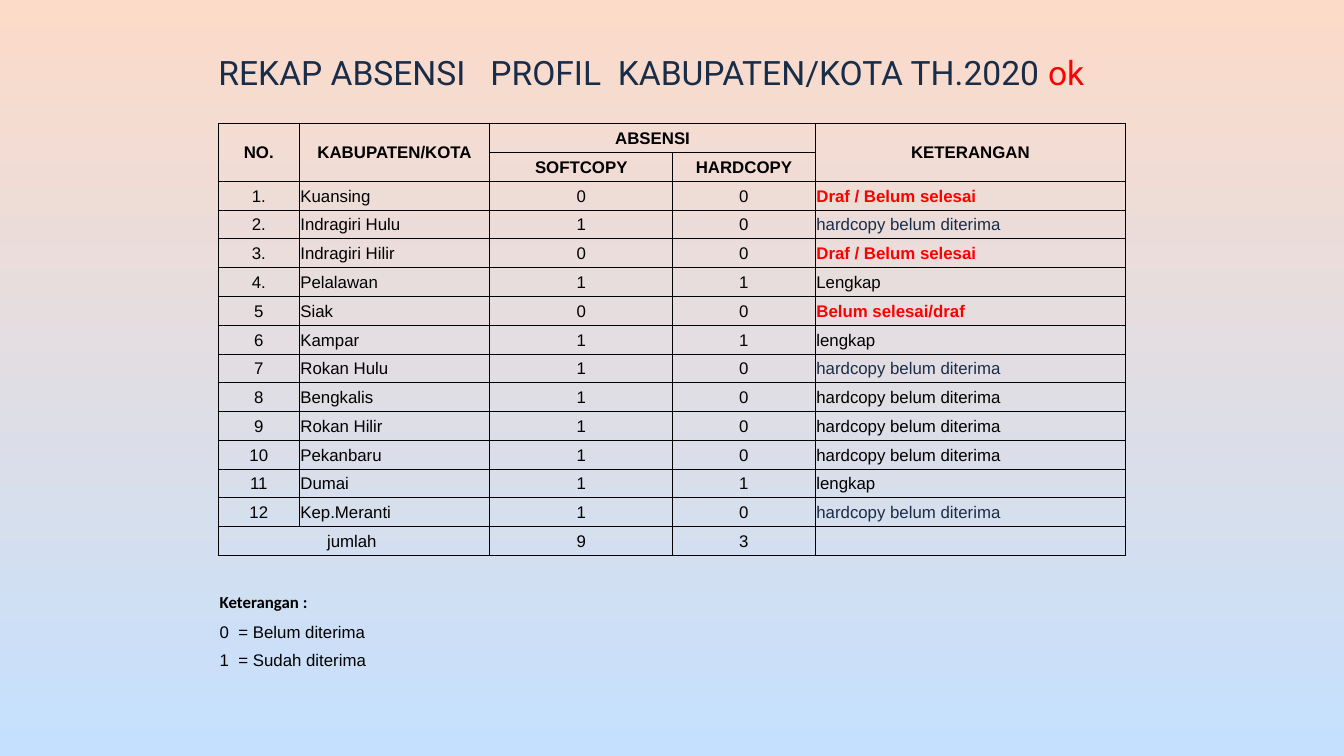
from lxml.etree import SubElement
from pptx import Presentation
from pptx.dml.color import RGBColor
from pptx.enum.text import MSO_ANCHOR as Anchor, MSO_AUTO_SIZE as AutoSize, PP_ALIGN as Align
from pptx.oxml.ns import qn
from pptx.util import Inches, Pt

BLACK, NAVY, RED = "000000", "192D49", "FF0000"
SKY_TOP, SKY_BOTTOM = "FCDBC9", "C5E0FE"
NO_STYLE = "{2D5ABB26-0587-4C30-8999-92F81FD0307C}"

# Content
TITLE = [("REKAP ABSENSI   PROFIL  KABUPATEN/KOTA TH.2020 ", NAVY), ("ok", RED)]
# (row, column, rows spanned, columns spanned, text)
HEADERS = [
    (0, 0, 2, 1, "NO."),
    (0, 1, 2, 2, "KABUPATEN/KOTA"),
    (0, 3, 1, 2, "ABSENSI"),
    (0, 5, 2, 1, "KETERANGAN"),
    (1, 3, 1, 1, "SOFTCOPY"),
    (1, 4, 1, 1, "HARDCOPY"),
]
# (number, regency, softcopy, hardcopy, remark, remark colour)
REGENCIES = [
    ("1.", "Kuansing", 0, 0, "Draf / Belum selesai", RED),
    ("2.", "Indragiri Hulu", 1, 0, "hardcopy belum diterima", NAVY),
    ("3.", "Indragiri Hilir", 0, 0, "Draf / Belum selesai", RED),
    ("4.", "Pelalawan", 1, 1, "Lengkap", BLACK),
    ("5", "Siak", 0, 0, "Belum selesai/draf", RED),
    ("6", "Kampar", 1, 1, "lengkap", BLACK),
    ("7", "Rokan Hulu", 1, 0, "hardcopy belum diterima", NAVY),
    ("8", "Bengkalis", 1, 0, "hardcopy belum diterima", BLACK),
    ("9", "Rokan Hilir", 1, 0, "hardcopy belum diterima", BLACK),
    ("10", "Pekanbaru", 1, 0, "hardcopy belum diterima", BLACK),
    ("11", "Dumai", 1, 1, "lengkap", BLACK),
    ("12", "Kep.Meranti", 1, 0, "hardcopy belum diterima", NAVY),
]
TOTAL_LABEL = "jumlah "
LEGEND = [("Keterangan :", "Calibri", True),
          ("0  = Belum diterima", "Arial", False),
          ("1  = Sudah diterima", "Arial", False)]

# Slide in 16:9, with a centred grid
SLIDE_WIDTH = 10
SLIDE_HEIGHT = SLIDE_WIDTH * 9 / 16
COLUMNS = [0.6, 0.52, 0.9, 1.36, 1.06, 2.31]
WIDTH = sum(COLUMNS)
LEFT = (SLIDE_WIDTH - WIDTH) / 2
TOP, HEIGHT = 0.92, 4.07
FIRST_ROW = 2
TOTAL_ROW = FIRST_ROW + len(REGENCIES)
LEGEND_ROW = TOTAL_ROW + 2
ROW_COUNT = LEGEND_ROW + len(LEGEND)


def color(value):
    return RGBColor.from_string(value)


def add_run(paragraph, text, size, font, ink, bold=False):
    run = paragraph.add_run()
    run.text = text
    run.font.size, run.font.name, run.font.bold = Pt(size), font, bold
    run.font.color.rgb = color(ink)


def add_borders(cell):
    properties = cell._tc.get_or_add_tcPr()
    for side in ("a:lnL", "a:lnR", "a:lnT", "a:lnB"):
        line = SubElement(properties, qn(side), w=str(Pt(0.5)))
        fill = SubElement(line, qn("a:solidFill"))
        SubElement(fill, qn("a:srgbClr"), val=BLACK)


def format_cell(cell, bordered):
    if bordered:
        add_borders(cell)
    cell.fill.background()
    cell.margin_left = cell.margin_right = cell.margin_top = Inches(0.01)
    cell.margin_bottom = 0
    # Keeps empty cells from stretching their row
    SubElement(cell.text_frame.paragraphs[0]._p, qn("a:endParaRPr"), sz="900")


def write(table, row, column, text, align=Align.CENTER, ink=BLACK, bold=False,
          font="Arial", anchor=Anchor.MIDDLE, rows=1, columns=1):
    cell = table.cell(row, column)
    if rows * columns > 1:
        cell.merge(table.cell(row + rows - 1, column + columns - 1))
    cell.vertical_anchor = anchor
    paragraph = cell.text_frame.paragraphs[0]
    paragraph.alignment = align
    add_run(paragraph, str(text), 9, font, ink, bold)


presentation = Presentation()
presentation.slide_width = Inches(SLIDE_WIDTH)
presentation.slide_height = Inches(SLIDE_HEIGHT)
slide = presentation.slides.add_slide(presentation.slide_layouts[5])

# Background
background = slide.background.fill
background.gradient()
background.gradient_angle = 270
for stop, shade in zip(background.gradient_stops, (SKY_TOP, SKY_BOTTOM)):
    stop.color.rgb = color(shade)

# Title
title = slide.shapes.title
title.left, title.top = Inches(LEFT), Inches(0.23)
title.width, title.height = Inches(WIDTH), Inches(0.46)
frame = title.text_frame
frame.auto_size, frame.word_wrap = AutoSize.NONE, True
frame.vertical_anchor = Anchor.BOTTOM
frame.margin_left = frame.margin_right = frame.margin_top = frame.margin_bottom = 0
heading = frame.paragraphs[0]
heading.alignment, heading.line_spacing = Align.LEFT, 0.9
for text, ink in TITLE:
    add_run(heading, text, 18, "Roboto", ink)

# Empty table grid
graphic = slide.shapes.add_table(ROW_COUNT, len(COLUMNS), Inches(LEFT), Inches(TOP),
                                 Inches(WIDTH), Inches(HEIGHT))
table = graphic.table
table.first_row = table.horz_banding = False
table._tbl.tblPr.find(qn("a:tableStyleId")).text = NO_STYLE
for column, width in zip(table.columns, COLUMNS):
    column.width = Inches(width)
for index, row in enumerate(table.rows):
    row.height = Inches(HEIGHT / ROW_COUNT)
    for cell in row.cells:
        format_cell(cell, index <= TOTAL_ROW)

# Header rows
for row, column, rows, columns, text in HEADERS:
    write(table, row, column, text, bold=True, rows=rows, columns=columns)

# One row per regency
for row, (number, name, soft, hard, remark, ink) in enumerate(REGENCIES, FIRST_ROW):
    write(table, row, 0, number)
    write(table, row, 1, name, Align.JUSTIFY, columns=2)
    write(table, row, 3, soft)
    write(table, row, 4, hard)
    write(table, row, 5, remark, Align.JUSTIFY, ink, bold=ink == RED)

# Totals
write(table, TOTAL_ROW, 0, TOTAL_LABEL, columns=3)
for column, field in ((3, 2), (4, 3)):
    write(table, TOTAL_ROW, column, sum(regency[field] for regency in REGENCIES))

# Legend below the grid
table.cell(TOTAL_ROW + 1, 0).merge(table.cell(TOTAL_ROW + 1, 1))
for row, (text, font, bold) in enumerate(LEGEND, LEGEND_ROW):
    write(table, row, 0, text, Align.LEFT, bold=bold, font=font,
          anchor=Anchor.BOTTOM, columns=3)

presentation.save("out.pptx")
